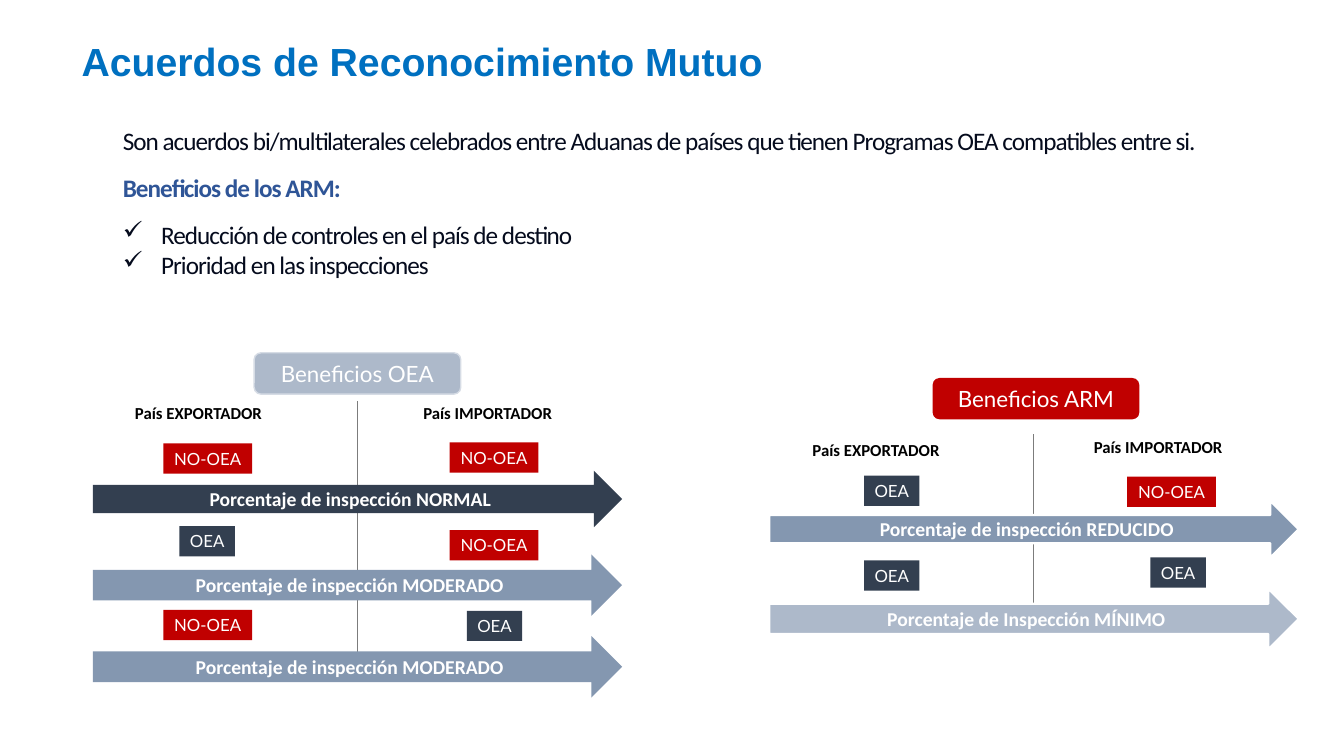
"""Builds the slide on mutual recognition agreements and their inspection benefits."""
from lxml import etree
from pptx import Presentation
from pptx.dml.color import RGBColor
from pptx.enum.shapes import MSO_CONNECTOR, MSO_SHAPE
from pptx.enum.text import MSO_ANCHOR, PP_ALIGN
from pptx.oxml.ns import qn
from pptx.util import Inches, Pt

RECT, ROUND, ARROW = MSO_SHAPE.RECTANGLE, MSO_SHAPE.ROUNDED_RECTANGLE, MSO_SHAPE.RIGHT_ARROW
STRAIGHT = MSO_CONNECTOR.STRAIGHT
MIDDLE, TOP = MSO_ANCHOR.MIDDLE, MSO_ANCHOR.TOP
LEFT, CENTER = PP_ALIGN.LEFT, PP_ALIGN.CENTER
COLORS = {"title": "0070C0", "body": "050B1D", "heading": "2F5597", "black": "000000",
          "white": "FFFFFF", "red": "C00000", "navy": "333F50", "steel": "8497B0",
          "mist": "ADB9CA", "pale": "D6DCE5", "gray": "7C7C7C"}


def write(p, text, size, font, color, bold=False):
    """Add one formatted run to a paragraph."""
    r = p.add_run()
    r.text = text
    for name, value in {"size": Pt(size), "name": font, "bold": bold}.items():
        setattr(r.font, name, value)
    r.font.color.rgb = RGBColor.from_string(COLORS[color])
    return r


def add_block(kind, box, fill, text, size, font, bold=False, line=None):
    """Add a filled shape with centred white text."""
    sp = s.shapes.add_shape(kind, *map(Inches, box))
    sp.shadow.inherit = False
    sp.fill.solid()
    sp.fill.fore_color.rgb = RGBColor.from_string(COLORS[fill])
    if line:
        sp.line.color.rgb = RGBColor.from_string(COLORS[line[0]])
        sp.line.width = Pt(line[1])
    else:
        sp.line.fill.background()
    tf = sp.text_frame
    tf.word_wrap = kind != RECT
    tf.vertical_anchor = MIDDLE
    p = tf.paragraphs[0]
    p.alignment = CENTER
    write(p, text, size, font, "white", bold)


prs = Presentation()
prs.slide_width, prs.slide_height = Inches(13.33), Inches(7.5)
s = prs.slides.add_slide(prs.slide_layouts[5])

title = s.shapes.title
title.left, title.top, title.width, title.height = map(Inches, (0.71, 0.39, 7.21, 0.48))
title.text_frame.vertical_anchor = MIDDLE
p = title.text_frame.paragraphs[0]
p.alignment, p.line_spacing = LEFT, 0.9
write(p, "Acuerdos de Reconocimiento Mutuo", 28, "Arial", "title", True)

tf = s.shapes.add_textbox(*map(Inches, (1.12, 1.19, 11.09, 2.06))).text_frame
tf.word_wrap = True
body = [
    ("Son acuerdos bi/multilaterales celebrados entre Aduanas de países que tienen "
     "Programas OEA compatibles entre si.", "body", 0, False),
    ("Beneficios de los ARM:", "heading", 12, False),
    ("Reducción de controles en el país de destino", "body", 12, True),
    ("Prioridad en las inspecciones", "body", 0, True),
]
for i, (text, color, before, bullet) in enumerate(body):
    p = tf.add_paragraph() if i else tf.paragraphs[0]
    p.space_before = Pt(before)
    if bullet:
        pPr = p._p.get_or_add_pPr()
        pPr.set("marL", str(Inches(0.38)))
        pPr.set("indent", str(-Inches(0.38)))
        etree.SubElement(pPr, qn("a:buChar")).set("char", "✓")
    r = write(p, text, 18, "Calibri", color, color == "heading")
    r.font._element.set("spc", "-70")

for x, y1, y2 in [(3.54, 3.98, 6.66), (10.25, 4.31, 6.05)]:
    cx = s.shapes.add_connector(STRAIGHT, *map(Inches, (x, y1, x, y2)))
    cx.line.color.rgb = RGBColor.from_string(COLORS["gray"])
    cx.line.width = Pt(0.5)
    etree.SubElement(cx._element.spPr, qn("a:effectLst"))

for x, y, role in [(1.24, 3.95, "EXPORTADOR"), (4.1, 3.95, "IMPORTADOR"),
                   (7.96, 4.31, "EXPORTADOR"), (10.75, 4.28, "IMPORTADOR")]:
    tf = s.shapes.add_textbox(*map(Inches, (x, y, 1.77, 0.3))).text_frame
    tf.word_wrap = True
    tf.vertical_anchor = TOP
    write(tf.paragraphs[0], f"País {role}", 12, "Calibri", "black", True)

white_edge = ("white", 1.5)
for x, y, h, fill, level, line in [
    (0.92, 4.67, 0.56, "navy", "inspección NORMAL", None),
    (0.92, 5.5, 0.61, "steel", "inspección MODERADO", None),
    (0.92, 6.31, 0.61, "steel", "inspección MODERADO", None),
    (7.63, 4.97, 0.56, "steel", "inspección REDUCIDO", white_edge),
    (7.63, 5.84, 0.6, "mist", "Inspección MÍNIMO", white_edge),
]:
    add_block(ARROW, (x, y, 5.25, h), fill, f"Porcentaje de {level}", 14, "Calibri", True, line)

add_block(ROUND, (2.52, 3.5, 2.05, 0.41), "mist", "Beneficios OEA", 16, "Lato", line=("pale", 1))
add_block(ROUND, (9.25, 3.75, 2.05, 0.41), "red", "Beneficios ARM", 16, "Lato")

chips = {
    "NO-OEA": (0.88, "red", [(1.62, 4.4), (4.46, 4.39), (4.46, 5.26), (1.62, 6.05), (11.18, 4.73)]),
    "OEA": (0.55, "navy", [(1.78, 5.22), (4.63, 6.06), (8.57, 4.72), (8.57, 5.56), (11.41, 5.53)]),
}
for text, (width, fill, places) in chips.items():
    for x, y in places:
        add_block(RECT, (x, y, width, 0.3), fill, text, 12, "Lato")

prs.save("out.pptx")
